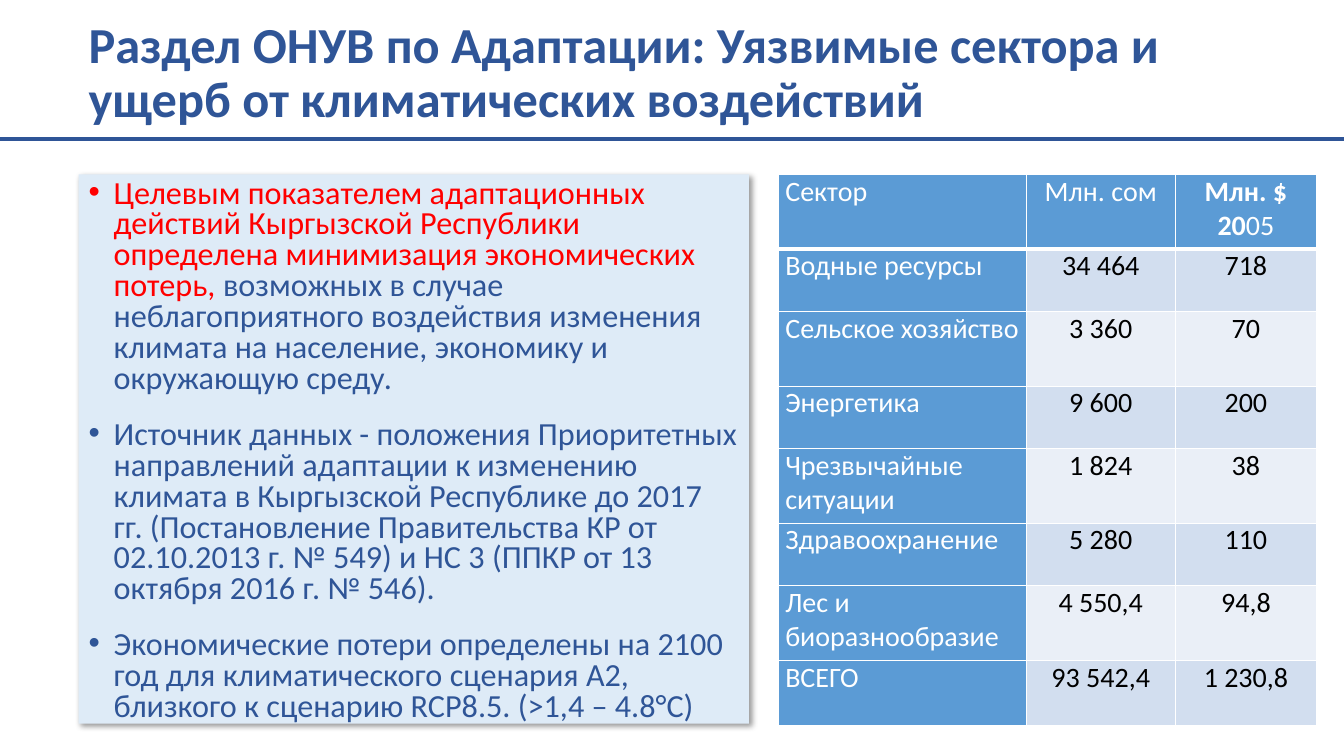
"""Build the slide on vulnerable sectors and climate damage."""
from lxml import etree
from pptx import Presentation
from pptx.dml.color import RGBColor
from pptx.enum.shapes import MSO_CONNECTOR as Connector, MSO_SHAPE as Shape
from pptx.enum.text import MSO_ANCHOR as Anchor, PP_ALIGN as Align
from pptx.oxml import parse_xml
from pptx.oxml.ns import nsdecls, qn
from pptx.util import Inches, Pt

WIDTH, HEIGHT = Inches(13.33), Inches(7.5)
FONT = "Calibri"
NAVY, RED, WHITE, BLACK = "2F5597", "FF0000", "FFFFFF", "000000"
PANEL, HEADING, BANDS = "DEEBF7", "5B9BD5", ("EAEFF7", "D2DEEF")
LEFT, TOP, BODY_HEIGHT = 5.85, 23.07, 72.67

TITLE = "Раздел ОНУВ по Адаптации: Уязвимые сектора и ущерб от климатических воздействий"
BULLETS = [
    [("Целевым показателем адаптационных действий Кыргызской Республики определена "
      "минимизация экономических потерь, ", RED),
     ("возможных в случае неблагоприятного воздействия изменения климата на население, "
      "экономику и окружающую среду.", NAVY)],
    [("Источник данных - положения Приоритетных направлений адаптации к изменению климата "
      "в Кыргызской Республике до 2017 гг. (Постановление Правительства КР от 02.10.2013 г. "
      "№ 549) и НС 3 (ППКР от 13 октября 2016 г. № 546).", NAVY)],
    [("Экономические потери определены на 2100 год для климатического сценария А2, близкого "
      "к сценарию RCP8.5. (>1,4 – 4.8°C)", NAVY)],
]
SECTORS = [
    ("Сектор", "Млн. сом", "Млн. $ 20"),
    ("Водные ресурсы", "34 464", "718"),
    ("Сельское хозяйство", "3 360", "70"),
    ("Энергетика", "9 600", "200"),
    ("Чрезвычайные ситуации", "1 824", "38"),
    ("Здравоохранение", "5 280", "110"),
    ("Лес и биоразнообразие", "4 550,4", "94,8"),
    ("ВСЕГО ", "93 542,4", "1 230,8"),
]
COLUMN_SHARES = (18.45, 11.1, 10.5)
ROW_SHARES = (9.87, 8.27, 9.87, 8.27, 9.87, 8.27, 9.87, 8.67)


def color(value):
    """Turn a hex string into a colour."""
    return RGBColor.from_string(value)


def across(share):
    """Return a percentage of the slide's width."""
    return int(WIDTH * share / 100)


def down(share):
    """Return a percentage of the slide's height."""
    return int(HEIGHT * share / 100)


def area(left, top, width, height):
    """Turn percentages into a position and size."""
    return across(left), down(top), across(width), down(height)


def add_span(para, text, size, shade, bold=False):
    """Append one formatted run to a paragraph."""
    span = para.add_run()
    span.text = text
    span.font.name, span.font.size, span.font.bold = FONT, Pt(size), bold
    span.font.color.rgb = color(shade)


def add_title(page):
    """Place the heading."""
    frame = page.shapes.add_textbox(*area(LEFT, 2, 92.03, 15.6)).text_frame
    frame.word_wrap, frame.vertical_anchor = True, Anchor.MIDDLE
    para = frame.paragraphs[0]
    para.line_spacing = 0.9
    add_span(para, TITLE, 36, NAVY, bold=True)


def add_shadow(box):
    """Give a shape a soft shadow to the lower right."""
    box.shadow.inherit = False
    effects = box._element.spPr.find(qn("a:effectLst"))
    effects.append(parse_xml(
        f'<a:outerShdw {nsdecls("a")} blurRad="{Pt(4)}" dist="{Pt(3)}" dir="2700000" '
        f'algn="tl" rotWithShape="0"><a:srgbClr val="{BLACK}"><a:alpha val="40000"/>'
        '</a:srgbClr></a:outerShdw>'))


def add_bullet(para, spans):
    """Fill a paragraph as a bulleted item."""
    para.alignment, para.line_spacing = Align.LEFT, 0.8
    para.space_before, para.space_after = Pt(6), Pt(12)
    settings = para._p.get_or_add_pPr()
    settings.set("marL", str(Inches(0.25)))
    settings.set("indent", str(-Inches(0.25)))
    etree.SubElement(settings, qn("a:buFont"), typeface="Arial")
    etree.SubElement(settings, qn("a:buChar"), char="•")
    for text, shade in spans:
        add_span(para, text, 23, shade)


def add_panel(page):
    """Place the shaded panel with its bullets."""
    box = page.shapes.add_shape(Shape.RECTANGLE, *area(LEFT, TOP, 49.88, BODY_HEIGHT))
    box.fill.solid()
    box.fill.fore_color.rgb = color(PANEL)
    box.line.fill.background()
    add_shadow(box)
    frame = box.text_frame
    frame.word_wrap, frame.vertical_anchor = True, Anchor.TOP
    for index, spans in enumerate(BULLETS):
        add_bullet(frame.add_paragraph() if index else frame.paragraphs[0], spans)


def add_borders(cell, bottom):
    """Draw white borders around a cell."""
    settings = cell._tc.get_or_add_tcPr()
    widths = {"lnL": 1, "lnR": 1, "lnT": 1, "lnB": bottom}
    for position, (side, width) in enumerate(widths.items()):
        settings.insert(position, parse_xml(
            f'<a:{side} {nsdecls("a")} w="{Pt(width)}"><a:solidFill>'
            f'<a:srgbClr val="{WHITE}"/></a:solidFill></a:{side}>'))


def fill_cell(cell, text, row, column):
    """Write and style one table cell."""
    heading = row == 0 or column == 0
    cell.margin_left = cell.margin_right = Inches(0.07)
    cell.margin_top = cell.margin_bottom = 0
    cell.fill.solid()
    cell.fill.fore_color.rgb = color(HEADING if heading else BANDS[row % 2])
    add_borders(cell, 1 if row else 3)
    para = cell.text_frame.paragraphs[0]
    wrapped = text.startswith("Лес")
    para.alignment = Align.CENTER if column else Align.LEFT if wrapped else Align.JUSTIFY
    dollars = row == 0 and column == 2
    shade = WHITE if heading else BLACK
    add_span(para, text, 20, shade, bold=dollars)
    if dollars:
        add_span(para, "05", 20, shade)


def add_sector_table(page):
    """Place the table of losses by sector."""
    place = area(57.91, TOP, sum(COLUMN_SHARES), BODY_HEIGHT)
    table = page.shapes.add_table(len(SECTORS), len(COLUMN_SHARES), *place).table
    for column, share in zip(table.columns, COLUMN_SHARES):
        column.width = across(share)
    for row, share in zip(table.rows, ROW_SHARES):
        row.height = down(share)
    for row, texts in enumerate(SECTORS):
        for column, text in enumerate(texts):
            fill_cell(table.cell(row, column), text, row, column)


def add_rule(page, top):
    """Draw a line across the whole slide."""
    rule = page.shapes.add_connector(Connector.STRAIGHT, 0, down(top), WIDTH, down(top))
    rule.line.color.rgb, rule.line.width = color(NAVY), Pt(3)
    etree.SubElement(rule._element.spPr, qn("a:effectLst"))


def main():
    """Build and save the deck."""
    deck = Presentation()
    deck.slide_width, deck.slide_height = WIDTH, HEIGHT
    page = deck.slides.add_slide(deck.slide_layouts[6])
    add_title(page)
    add_panel(page)
    add_sector_table(page)
    add_rule(page, 18.4)
    deck.save("out.pptx")


if __name__ == "__main__":
    main()
